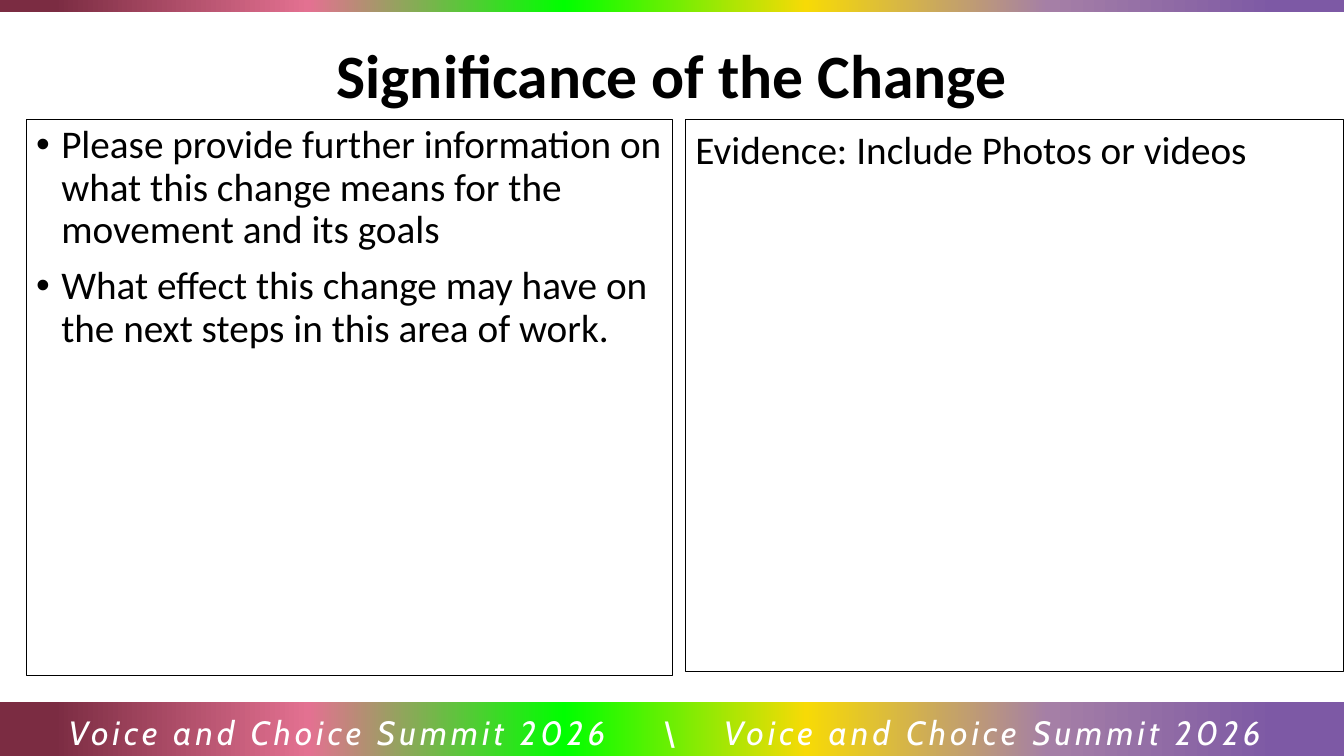
from dataclasses import dataclass
from typing import Optional

import pptx
import pptx.dml.color
import pptx.enum.shapes
import pptx.enum.text
import pptx.oxml
import pptx.oxml.ns
import pptx.util
from lxml import etree

COLUMNS, ROWS = 160, 90
BLACK, WHITE = "000000", "FFFFFF"
RAINBOW = ((5, "7D59A5"), (22, "A57FA6"), (40, "F7DA06"),
           (58, "00FF00"), (77, "E37191"), (96, "7B2C42"))
SUMMIT = "Voice and Choice Summit 2026"
FOOTER_TABS = (5.88, 6.5)
BULLET_INDENT = pptx.util.Inches(0.25)


@dataclass(frozen=True)
class Area:
    column: float
    row: float
    columns: float
    rows: float


@dataclass(frozen=True)
class Panel:
    area: Area
    lines: tuple[str, ...]
    bullet: Optional[str] = None
    line_spacing: float = 1.0


BARS = (Area(0, 0, COLUMNS, 1.44), Area(0, 83.52, COLUMNS, 6.84))
TITLE = Area(0, 3.24, COLUMNS, 11.04)
FOOTER = Area(0, 83.88, COLUMNS, 5.88)
PANELS = (
    Panel(Area(81.62, 14.28, 78.38, 65.64), ("Evidence: Include Photos or videos",)),
    Panel(
        Area(3.12, 14.28, 76.94, 66.12),
        ("Please provide further information on what this change means for the movement and its goals",
         "What effect this change may have on the next steps in this area of work."),
        bullet="•",
        line_spacing=0.9,
    ),
)

presentation = pptx.Presentation()
presentation.slide_width = pptx.util.Inches(13.33)
presentation.slide_height = pptx.util.Inches(7.5)


def color(value: str) -> pptx.dml.color.RGBColor:
    return pptx.dml.color.RGBColor.from_string(value)


def place(area: Area) -> tuple[int, int, int, int]:
    column = presentation.slide_width / COLUMNS
    row = presentation.slide_height / ROWS
    return (round(area.column * column), round(area.row * row),
            round(area.columns * column), round(area.rows * row))


def add_child(parent, tag: str, **attributes: str):
    return etree.SubElement(parent, pptx.oxml.ns.qn(tag), attributes)


def format_font(paragraph, name: str, size: float, value: str,
                bold: bool = False, italic: bool = False) -> None:
    for run in paragraph.runs:
        run.font.name = name
        run.font.size = pptx.util.Pt(size)
        run.font.bold = bold
        run.font.italic = italic
        run.font.color.rgb = color(value)


def add_rectangle(slide, area: Area):
    shape = slide.shapes.add_shape(pptx.enum.shapes.MSO_SHAPE.RECTANGLE, *place(area))
    shape.shadow.inherit = False
    return shape


def add_bar(slide, area: Area) -> None:
    shape = add_rectangle(slide, area)
    shape.line.fill.background()
    shape.fill.gradient()
    shape.fill.gradient_angle = 180
    stops = shape.element.spPr.find(".//" + pptx.oxml.ns.qn("a:gsLst"))
    for stop in list(stops):
        stops.remove(stop)
    for percent, value in RAINBOW:
        stop = add_child(stops, "a:gs", pos=str(percent * 1000))
        add_child(stop, "a:srgbClr", val=value)


def add_title(slide) -> None:
    title = slide.shapes.title
    title.left, title.top, title.width, title.height = place(TITLE)
    text_frame = title.text_frame
    text_frame.text = "Significance of the Change"
    text_frame.auto_size = pptx.enum.text.MSO_AUTO_SIZE.NONE
    text_frame.vertical_anchor = pptx.enum.text.MSO_ANCHOR.MIDDLE
    paragraph = text_frame.paragraphs[0]
    paragraph.alignment = pptx.enum.text.PP_ALIGN.CENTER
    format_font(paragraph, "Calibri", 44, BLACK, bold=True)


def add_panel(slide, panel: Panel) -> None:
    shape = add_rectangle(slide, panel.area)
    shape.fill.background()
    shape.line.color.rgb = color(BLACK)
    shape.line.width = pptx.util.Pt(0.75)
    text_frame = shape.text_frame
    text_frame.word_wrap = True
    text_frame.vertical_anchor = pptx.enum.text.MSO_ANCHOR.TOP
    text_frame.text = "\n".join(panel.lines)
    for index, paragraph in enumerate(text_frame.paragraphs):
        paragraph.alignment = pptx.enum.text.PP_ALIGN.LEFT
        paragraph.line_spacing = panel.line_spacing
        if index:
            paragraph.space_before = pptx.util.Pt(10)
        if panel.bullet:
            properties = paragraph._p.get_or_add_pPr()
            properties.set("marL", str(BULLET_INDENT))
            properties.set("indent", str(-BULLET_INDENT))
            add_child(properties, "a:buFont", typeface="Arial")
            add_child(properties, "a:buChar", char=panel.bullet)
        format_font(paragraph, "Calibri", 28, BLACK)


def add_footer(slide) -> None:
    text_frame = slide.shapes.add_textbox(*place(FOOTER)).text_frame
    text_frame.word_wrap = True
    text_frame.margin_left = pptx.util.Inches(0.68)
    text_frame.text = f"{SUMMIT}\t\\\t{SUMMIT}"
    paragraph = text_frame.paragraphs[0]
    paragraph.line_spacing = 1.07
    tabs = add_child(paragraph._p.get_or_add_pPr(), "a:tabLst")
    for position in FOOTER_TABS:
        add_child(tabs, "a:tab", pos=str(pptx.util.Inches(position)), algn="l")
    format_font(paragraph, "Cabin", 24, WHITE, italic=True)
    for run in paragraph.runs:
        run.font._element.set("spc", "300")


def main() -> None:
    slide = presentation.slides.add_slide(presentation.slide_layouts[5])
    for bar in BARS:
        add_bar(slide, bar)
    add_title(slide)
    for panel in PANELS:
        add_panel(slide, panel)
    add_footer(slide)
    presentation.save("out.pptx")


if __name__ == "__main__":
    main()
